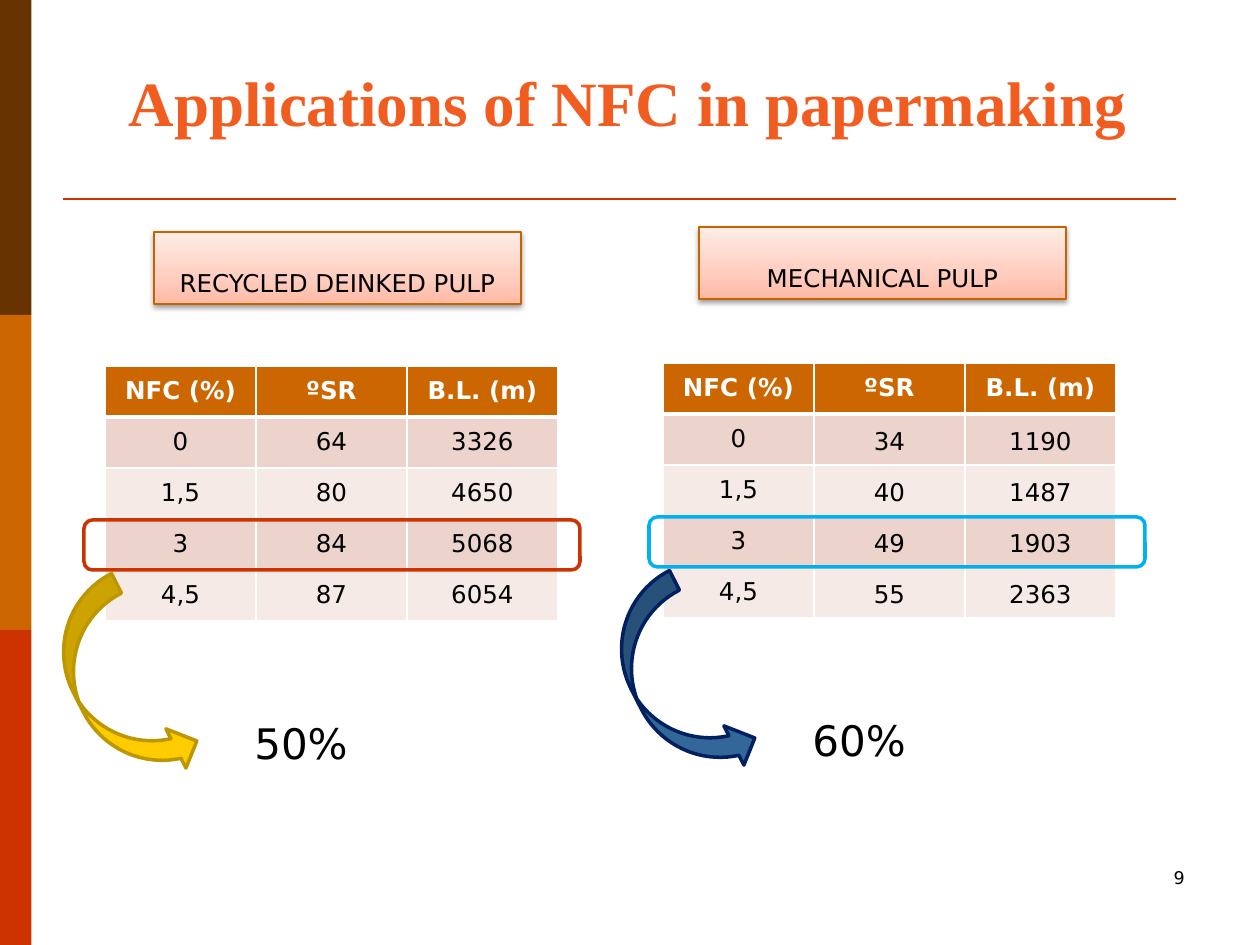
from copy import deepcopy

from lxml import etree
from pptx import Presentation
from pptx import util as u
from pptx.dml.color import RGBColor
from pptx.enum import shapes, text
from pptx.oxml import parse_xml
from pptx.oxml.ns import nsdecls, qn

PX = 914400 / 126
SANS = "DejaVu Sans"
SERIF = "Times New Roman"
COLORS = {
    "brown": "663300", "orange": "CC6600", "red": "CC3300",
    "title": "F15D20", "black": "000000", "white": "FFFFFF",
    "band_dark": "ECD3CC", "band_light": "F6EAE7",
    "label_edge": "C86400", "cyan": "00B0F0",
    "yellow": "FFCC00", "dark_yellow": "BD9700",
    "blue": "336699", "navy": "002060",
}
LABEL_GRADIENT = [(0, "FFB9A5"), (0.35, "FFCDBF"), (1, "FFECE7")]
HEADERS = ["NFC (%)", "ºSR", "B.L. (m)"]
COLUMN, ROW = 151, 51


def px(*values):
    return [u.Emu(round(value * PX)) for value in values]


def color(name):
    return RGBColor.from_string(COLORS[name])


def format_text(frame, size, align, name="black", font=SANS, bold=False):
    paragraph = frame.paragraphs[0]
    paragraph.alignment = align
    for run in paragraph.runs:
        run.font.size = u.Pt(size)
        run.font.name = font
        run.font.bold = bold
        run.font.color.rgb = color(name)
    return paragraph


def add_shape(slide, kind, box, fill=None, line=None, width=2):
    shape = slide.shapes.add_shape(kind, *px(*box))
    shape.shadow.inherit = False
    if fill:
        shape.fill.solid()
        shape.fill.fore_color.rgb = color(fill)
    else:
        shape.fill.background()
    if line:
        shape.line.color.rgb = color(line)
        shape.line.width = u.Pt(width)
    else:
        shape.line.fill.background()
    return shape


def add_text(slide, box, wording, size, align):
    frame = slide.shapes.add_textbox(*px(*box)).text_frame
    frame.word_wrap = True
    frame.text = wording
    format_text(frame, size, align)


def add_frame(slide):
    # Side bars
    for index, name in enumerate(["brown", "orange", "red"]):
        add_shape(slide, shapes.MSO_SHAPE.RECTANGLE,
                  (0, index * 315, 31.5, 315), name)
    # Rule under the title
    rule = slide.shapes.add_connector(
        shapes.MSO_CONNECTOR.STRAIGHT, *px(63, 199, 1176, 199))
    rule.line.color.rgb = color("red")
    rule.line.width = u.Pt(1.5)
    etree.SubElement(rule._element.spPr, qn("a:effectLst"))
    # Title
    title = slide.shapes.title
    title.left, title.top, title.width, title.height = px(59, 45, 1137, 100)
    frame = title.text_frame
    frame.text = "Applications of NFC in papermaking"
    frame.vertical_anchor = text.MSO_ANCHOR.BOTTOM
    format_text(frame, 36, text.PP_ALIGN.CENTER, "title", SERIF, True)
    # Slide number
    add_text(slide, (903, 861, 294, 63), "9", 10, text.PP_ALIGN.RIGHT)


def add_label(slide, left, top, wording):
    label = add_shape(slide, shapes.MSO_SHAPE.RECTANGLE, (left, top, 367, 72),
                      line="label_edge", width=0.75)
    # Three-stop gradient, running upwards
    label.fill.gradient()
    label.fill.gradient_angle = 90
    stop_list = label._element.spPr.find(".//" + qn("a:gsLst"))
    stop_list.insert(1, deepcopy(stop_list[0]))
    for stop, (position, value) in zip(label.fill.gradient_stops,
                                       LABEL_GRADIENT):
        stop.position = position
        stop.color.rgb = RGBColor.from_string(value)
    # Soft shadow below
    label._element.spPr.find(qn("a:effectLst")).append(parse_xml(
        f'<a:outerShdw {nsdecls("a")} blurRad="39370" dist="20320" '
        'dir="5400000" rotWithShape="0"><a:srgbClr val="000000">'
        '<a:alpha val="38000"/></a:srgbClr></a:outerShdw>'))
    frame = label.text_frame
    frame.word_wrap = True
    frame.vertical_anchor = text.MSO_ANCHOR.MIDDLE
    frame.text = wording
    format_text(frame, 14, text.PP_ALIGN.CENTER).line_spacing = 2.0


def set_borders(cell, row):
    widths = {"L": 1, "R": 1, "T": 3 if row == 1 else 1,
              "B": 3 if row == 0 else 1}
    properties = cell._tc.get_or_add_tcPr()
    for index, (side, width) in enumerate(widths.items()):
        properties.insert(index, parse_xml(
            f'<a:ln{side} {nsdecls("a")} w="{u.Pt(width)}"><a:solidFill>'
            f'<a:srgbClr val="{COLORS["white"]}"/></a:solidFill></a:ln{side}>'))


def add_table(slide, left, top, rows, loose):
    grid = [HEADERS] + rows
    table = slide.shapes.add_table(
        len(grid), len(HEADERS),
        *px(left, top, COLUMN * len(HEADERS), ROW * len(grid))).table
    for column in table.columns:
        column.width = px(COLUMN)[0]
    for r, values in enumerate(grid):
        table.rows[r].height = px(ROW)[0]
        fill = "orange" if r == 0 else "band_dark" if r % 2 else "band_light"
        for c, value in enumerate(values):
            cell = table.cell(r, c)
            cell.text = value
            cell.vertical_anchor = text.MSO_ANCHOR.MIDDLE
            cell.fill.solid()
            cell.fill.fore_color.rgb = color(fill)
            set_borders(cell, r)
            paragraph = format_text(
                cell.text_frame, 14, text.PP_ALIGN.CENTER,
                "black" if r else "white", bold=r == 0)
            if loose and r and c:
                cell.margin_left = cell.margin_right = u.Inches(0.05)
                cell.margin_top = cell.margin_bottom = 0
                paragraph.line_spacing = 1.15


def add_panel(slide, left, top, label, label_offset, rows, highlight,
              highlight_offset, arrow_fill, arrow_line, gain, loose=False):
    add_label(slide, left + label_offset[0], top + label_offset[1], label)
    add_table(slide, left, top, rows, loose)
    # Outline around the chosen row
    add_shape(slide, shapes.MSO_SHAPE.ROUNDED_RECTANGLE,
              (left + highlight_offset, top + 154, 496, 50), line=highlight)
    # Arrow from the chosen row to its gain
    arrow = add_shape(slide, shapes.MSO_SHAPE.CURVED_DOWN_ARROW,
                      (left - 90, top + 277, 210, 88), arrow_fill, arrow_line)
    arrow.rotation = 63
    arrow._element.spPr.xfrm.set("flipV", "1")
    add_text(slide, (left + 137, top + 345, 149, 63), gain, 24,
             text.PP_ALIGN.LEFT)


def main():
    presentation = Presentation()
    presentation.slide_width, presentation.slide_height = px(1260, 945)
    slide = presentation.slides.add_slide(presentation.slide_layouts[5])
    add_frame(slide)
    add_panel(slide, 105, 366, "RECYCLED DEINKED PULP", (49, -134),
              [["0", "64", "3326"], ["1,5", "80", "4650"],
               ["3", "84", "5068"], ["4,5", "87", "6054"]],
              "red", -21, "yellow", "dark_yellow", "50%")
    add_panel(slide, 663, 363, "MECHANICAL PULP", (36, -136),
              [["0", "34", "1190"], ["1,5", "40", "1487"],
               ["3", "49", "1903"], ["4,5", "55", "2363"]],
              "cyan", -14, "blue", "navy", "60%", loose=True)
    presentation.save("out.pptx")


if __name__ == "__main__":
    main()
